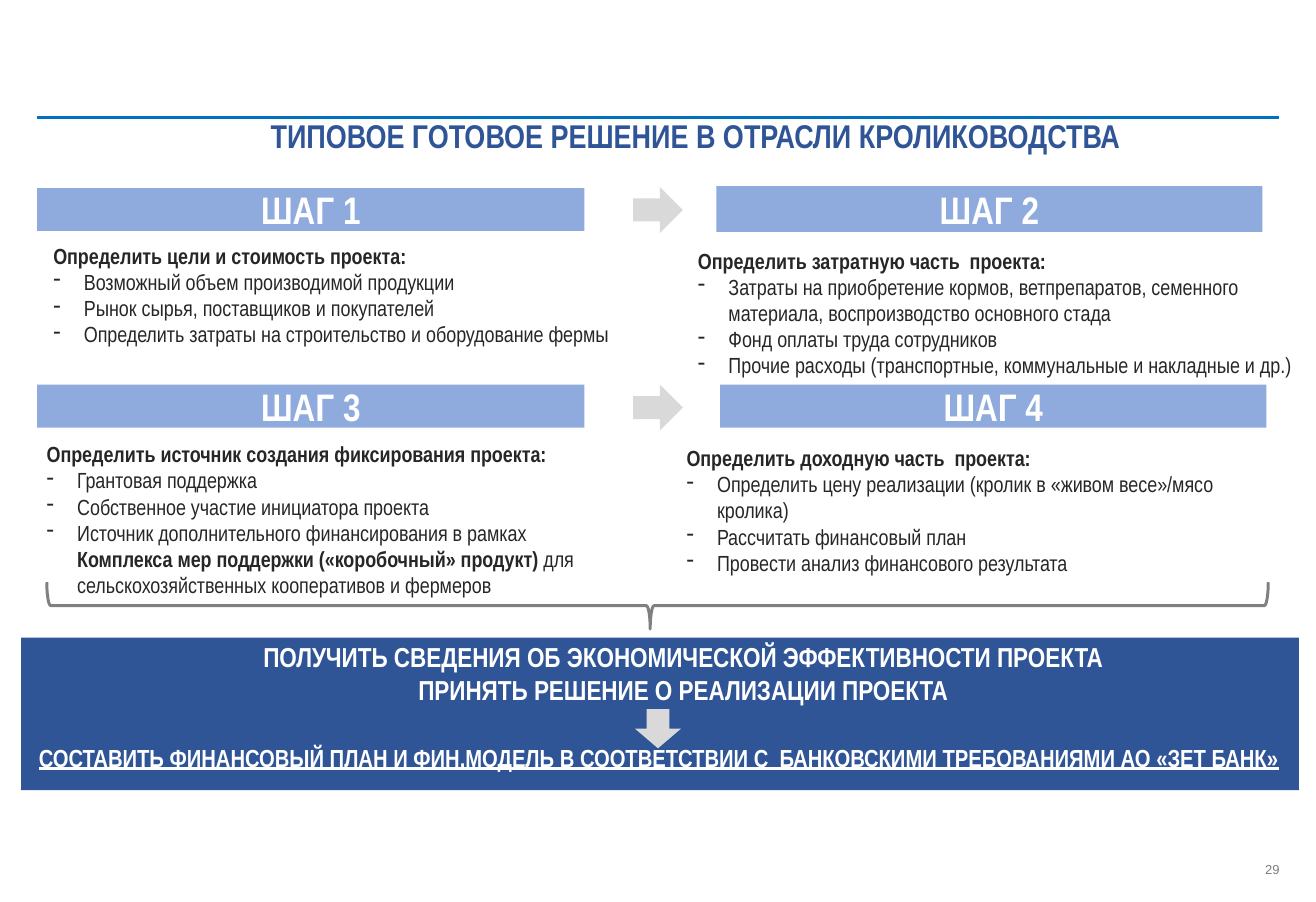
from lxml.etree import SubElement
from pptx import Presentation
from pptx.dml.color import RGBColor
from pptx.enum.shapes import MSO_CONNECTOR, MSO_SHAPE
from pptx.enum.text import MSO_ANCHOR, PP_ALIGN
from pptx.oxml.ns import qn
from pptx.util import Inches, Pt

NAVY = RGBColor(0x2F, 0x55, 0x97)
LIGHT_BLUE = RGBColor(0x8F, 0xAA, 0xDC)
RULE_BLUE = RGBColor(0x00, 0x70, 0xC0)
INK = RGBColor(0x26, 0x26, 0x26)
GRAY = RGBColor(0x7F, 0x7F, 0x7F)
BRACE_GRAY = RGBColor(0x80, 0x80, 0x80)
ARROW_GRAY = RGBColor(0xD9, 0xD9, 0xD9)
WHITE = RGBColor(0xFF, 0xFF, 0xFF)

NARROW = "Arial Narrow"
INDENT = Inches(0.32)
PACKAGE = "Комплекса мер поддержки («коробочный» продукт)"

# Each step: bar label, bar box, text box, heading, bullets
STEPS = [
    ("ШАГ 1", (0.39, 1.97, 5.73, 0.45), (0.46, 2.49, 6.23, 1.21),
     "Определить цели и стоимость проекта:",
     ["Возможный объем производимой продукции",
      "Рынок сырья, поставщиков и покупателей",
      "Определить затраты на строительство и оборудование фермы"]),
    ("ШАГ 2", (7.5, 1.95, 5.72, 0.48), (7.21, 2.54, 6.57, 1.49),
     "Определить затратную часть  проекта:",
     ["Затраты на приобретение кормов, ветпрепаратов, семенного материала, "
      "воспроизводство основного стада",
      "Фонд оплаты труда сотрудников",
      "Прочие расходы (транспортные, коммунальные и накладные и др.)"]),
    ("ШАГ 3", (0.39, 4.03, 5.73, 0.45), (0.39, 4.57, 5.97, 1.83),
     "Определить источник создания фиксирования проекта:",
     ["Грантовая поддержка",
      "Собственное участие инициатора проекта",
      "Источник дополнительного финансирования в рамках " + PACKAGE
      + " для сельскохозяйственных кооперативов и фермеров"]),
    ("ШАГ 4", (7.54, 4.03, 5.72, 0.45), (7.09, 4.61, 6.09, 1.83),
     "Определить доходную часть  проекта:",
     ["Определить цену реализации (кролик в «живом весе»/мясо кролика)",
      "Рассчитать финансовый план",
      "Провести анализ финансового результата"]),
]


def to_inches(box):
    return [Inches(length) for length in box]


def style_font(font, size, color, bold=False, name=NARROW):
    font.name, font.size, font.bold = name, Pt(size), bold
    font.color.rgb = color


def add_text(page, box, lines, size, color, bold=True, align=PP_ALIGN.LEFT, name=NARROW):
    frame = page.shapes.add_textbox(*to_inches(box)).text_frame
    frame.word_wrap = True
    frame.text = "\n".join(lines)
    for para in frame.paragraphs:
        para.alignment = align
        for span in para.runs:
            style_font(span.font, size, color, bold, name)
    return frame


def add_filled(page, kind, box, color):
    shape = page.shapes.add_shape(kind, *to_inches(box))
    shape.shadow.inherit = False
    shape.fill.solid()
    shape.fill.fore_color.rgb = color
    shape.line.fill.background()
    return shape


def add_dash(para):
    properties = para._p.get_or_add_pPr()
    properties.set("marL", str(INDENT))
    properties.set("indent", str(-INDENT))
    SubElement(properties, qn("a:buFontTx"))
    SubElement(properties, qn("a:buChar")).set("char", "-")


def add_bullet(frame, text):
    """Adds a dashed item, with the support package in bold."""
    para = frame.add_paragraph()
    add_dash(para)
    before, package, after = text.partition(PACKAGE)
    for part in filter(None, (before, package, after)):
        span = para.add_run()
        span.text = part
        style_font(span.font, 16.5, INK, bold=part == PACKAGE)


def add_step(page, label, bar_box, text_box, heading, bullets):
    frame = add_filled(page, MSO_SHAPE.RECTANGLE, bar_box, LIGHT_BLUE).text_frame
    frame.text = label
    frame.vertical_anchor = MSO_ANCHOR.MIDDLE
    para = frame.paragraphs[0]
    para.alignment = PP_ALIGN.CENTER
    style_font(para.runs[0].font, 28.9, WHITE, bold=True)

    body = add_text(page, text_box, [heading], 16.5, INK)
    for bullet in bullets:
        add_bullet(body, bullet)


def add_header(page, box):
    left, top, width, height = box
    rule = page.shapes.add_connector(
        MSO_CONNECTOR.STRAIGHT, *to_inches((left, top, left + width, top)))
    rule.line.color.rgb = RULE_BLUE
    rule.line.width = Pt(2.25)
    SubElement(rule._element.spPr, qn("a:effectLst"))
    add_text(page, (left + 0.72, top - 0.07, width - 0.65, height),
             ["ТИПОВОЕ ГОТОВОЕ РЕШЕНИЕ В ОТРАСЛИ КРОЛИКОВОДСТВА"],
             24.8, NAVY, align=PP_ALIGN.CENTER)


def add_brace(page, box):
    """Places a right brace turned to point down; the box is as it looks."""
    left, top, width, height = box
    upright = (left + (width - height) / 2, top + (height - width) / 2, height, width)
    brace = page.shapes.add_shape(MSO_SHAPE.RIGHT_BRACE, *to_inches(upright))
    brace.rotation = 90
    brace.adjustments[0] = 0.083
    brace.adjustments[1] = 0.506
    brace.shadow.inherit = False
    brace.fill.background()
    brace.line.color.rgb = BRACE_GRAY
    brace.line.width = Pt(2.25)


def add_result(page, box):
    left, top, width, height = box
    add_filled(page, MSO_SHAPE.RECTANGLE, box, NAVY)
    add_text(page, (left + 0.79, top - 0.02, 12.29, 0.82),
             ["ПОЛУЧИТЬ СВЕДЕНИЯ ОБ ЭКОНОМИЧЕСКОЙ ЭФФЕКТИВНОСТИ ПРОЕКТА",
              "ПРИНЯТЬ РЕШЕНИЕ О РЕАЛИЗАЦИИ ПРОЕКТА"],
             20.7, WHITE, align=PP_ALIGN.CENTER)
    final = add_text(page, (left + 0.09, top + 1.05, width + 0.09, height - 1.05),
                     ["СОСТАВИТЬ ФИНАНСОВЫЙ ПЛАН И ФИН.МОДЕЛЬ В СООТВЕТСТВИИ С  "
                      "БАНКОВСКИМИ ТРЕБОВАНИЯМИ АО «ЗЕТ БАНК»"], 18.6, WHITE)
    final.paragraphs[0].runs[0].font.underline = True
    add_filled(page, MSO_SHAPE.DOWN_ARROW, (left + 6.43, top + 0.75, 0.48, 0.41), ARROW_GRAY)


def add_page_number(page, box):
    frame = add_text(page, box, ["29"], 9.8, GRAY, bold=False,
                     align=PP_ALIGN.RIGHT, name="Arial")
    frame.margin_left = frame.margin_right = frame.margin_top = frame.margin_bottom = 0
    frame.paragraphs[0].line_spacing = Pt(11.8)


def main():
    deck = Presentation()
    deck.slide_width, deck.slide_height = Inches(13.78), Inches(9.45)
    page = deck.slides.add_slide(deck.slide_layouts[6])
    add_page_number(page, (12.98, 9.03, 0.42, 0.2))
    add_header(page, (0.39, 1.23, 13, 0.54))
    for step in STEPS:
        add_step(page, *step)
    for top in (1.96, 4.03):
        add_filled(page, MSO_SHAPE.RIGHT_ARROW, (6.63, top, 0.52, 0.48), ARROW_GRAY)
    add_result(page, (0.22, 6.68, 13.38, 1.6))
    add_brace(page, (0.49, 6.1, 12.79, 0.49))
    deck.save("out.pptx")


if __name__ == "__main__":
    main()
